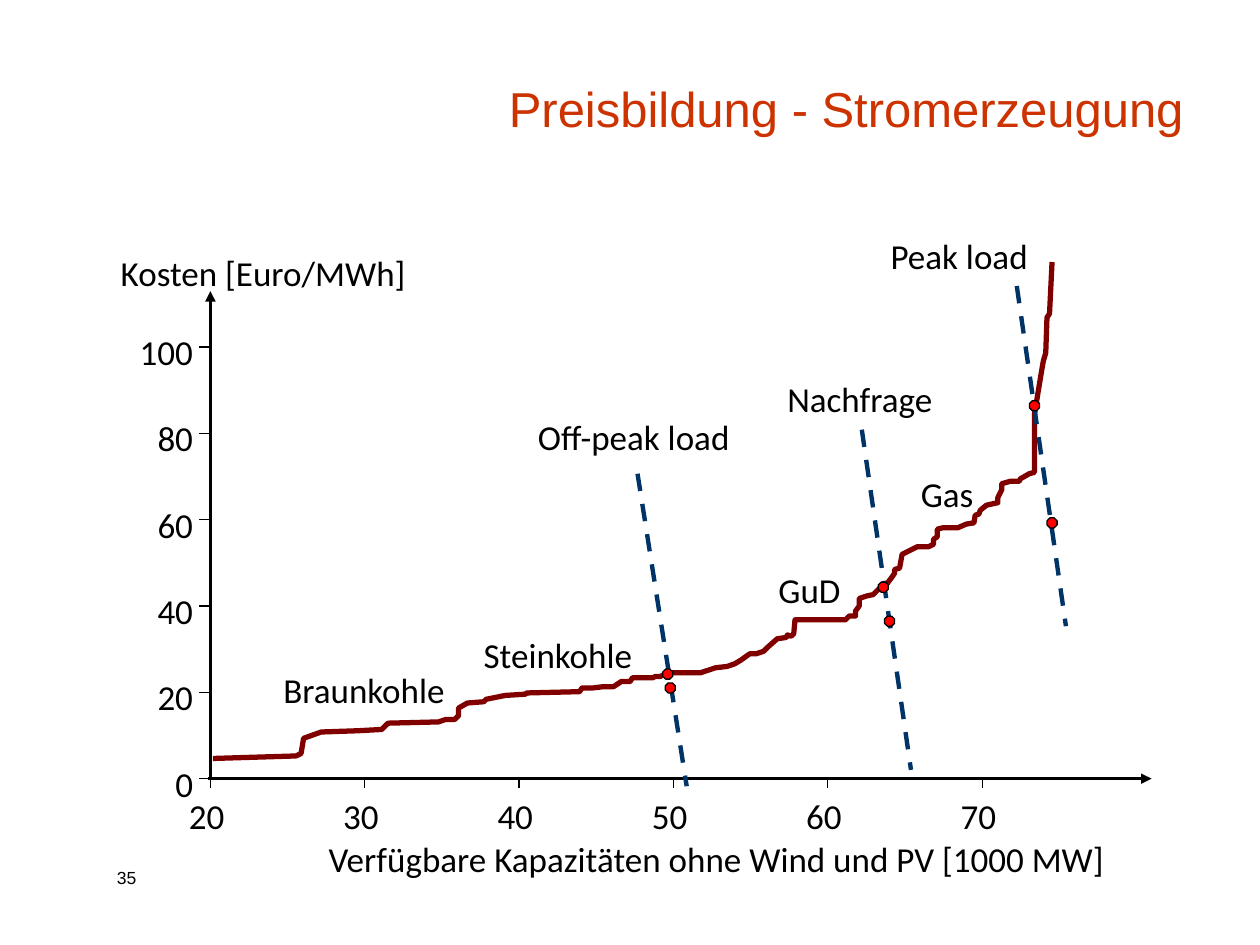
from dataclasses import dataclass

import pptx
import pptx.dml.color
import pptx.enum.dml
import pptx.enum.shapes
import pptx.enum.text
import pptx.oxml
import pptx.oxml.ns
import pptx.util

Inches = pptx.util.Inches
Align = pptx.enum.text.PP_ALIGN
Anchor = pptx.enum.text.MSO_ANCHOR

COLORS = {
    "text": "000000",
    "title": "CC3300",
    "axis": "000000",
    "supply": "800000",
    "demand": "003366",
    "point": "FF0000",
}

ORIGIN_X, ORIGIN_Y = 1.67, 6.18
STEP_X, STEP_Y = 1.225, 0.685
POINT_SIZE = 0.08


@dataclass
class Label:
    text: str
    left: float
    top: float
    width: float
    height: float = 0.44
    size: float = 20
    font: str = "Calibri"
    color: str = "text"
    align: Align = Align.LEFT
    anchor: Anchor = Anchor.TOP


@dataclass
class Line:
    x1: float
    y1: float
    x2: float
    y2: float
    width: float = 0.75
    color: str = "axis"
    dashed: bool = False
    arrow: bool = False


AXES = [
    Line(1.65, ORIGIN_Y, 9.14, ORIGIN_Y, 2, arrow=True),
    Line(ORIGIN_X, 6.19, ORIGIN_X, 2.31, 2, arrow=True),
]
DEMAND_LINES = [
    Line(6.84, 3.41, 7.23, 6.11, 2.5, "demand", dashed=True),
    Line(5.06, 3.76, 5.45, 6.24, 2.5, "demand", dashed=True),
    Line(8.07, 2.27, 8.46, 4.97, 2.5, "demand", dashed=True),
]
LABELS = [
    Label("35", 0.83, 6.83, 0.67, 0.27, 10, "Arial"),
    Label("Preisbildung - Stromerzeugung", 2.09, 0.42, 7.4, 0.72, 28, "Arial",
          "title", Align.RIGHT, Anchor.BOTTOM),
    Label("Kosten [Euro/MWh]", 0.86, 1.95, 3.26),
    Label("Verfügbare Kapazitäten ohne Wind und PV [1000 MW]", 2.51, 6.6, 6.48),
    Label("Nachfrage", 6.15, 2.95, 1.44),
    Label("Off-peak load", 4.17, 3.25, 1.88),
    Label("Peak load", 6.97, 1.81, 1.63),
    Label("Steinkohle", 3.74, 4.98, 1.56),
    Label("Braunkohle", 2.15, 5.26, 1.52),
    Label("Gas", 7.21, 3.7, 1.02),
    Label("GuD", 6.08, 4.46, 0.91),
]
MARKET_POINTS = [(5.26, 5.31), (8.17, 3.18), (6.97, 4.62),
                 (5.28, 5.42), (8.31, 4.11), (7.02, 4.89)]

# Supply curve vertices in hundredths of an inch
SUPPLY_CURVE = [
    (169, 602), (235, 600), (239, 598), (240, 592), (241, 586), (255, 581),
    (284, 580), (303, 579), (308, 574), (348, 573), (354, 571), (361, 571),
    (364, 568), (364, 562), (371, 558), (384, 557), (386, 555), (401, 552),
    (417, 551), (418, 550), (460, 549), (462, 546), (471, 546), (479, 545),
    (487, 545), (493, 541), (500, 541), (502, 538), (518, 538), (520, 537),
    (524, 537), (530, 534), (556, 534), (568, 530), (577, 529), (583, 527),
    (588, 524), (595, 519), (600, 519), (606, 517), (609, 514), (617, 507),
    (624, 506), (625, 504), (628, 505), (630, 503), (631, 492), (671, 492),
    (674, 489), (679, 489), (679, 485), (682, 481), (682, 475), (688, 473),
    (693, 472), (699, 466), (703, 465), (705, 462), (708, 458), (710, 455),
    (710, 452), (714, 451), (716, 440), (728, 434), (737, 434), (741, 432),
    (741, 428), (744, 426), (744, 420), (748, 419), (760, 419), (767, 416),
    (773, 415), (774, 409), (777, 408), (778, 405), (783, 401), (792, 399),
    (792, 395), (795, 389), (795, 384), (802, 382), (809, 382), (810, 380),
    (817, 376), (821, 375), (821, 329), (827, 293), (828, 287), (830, 280),
    (831, 252), (833, 249), (835, 208),
]


def rgb(name: str) -> pptx.dml.color.RGBColor:
    return pptx.dml.color.RGBColor.from_string(COLORS[name])


def add_label(slide, label: Label) -> None:
    box = slide.shapes.add_textbox(Inches(label.left), Inches(label.top),
                                   Inches(label.width), Inches(label.height))
    frame = box.text_frame
    frame.word_wrap = True
    frame.vertical_anchor = label.anchor
    frame.text = label.text
    paragraph = frame.paragraphs[0]
    paragraph.alignment = label.align
    font = paragraph.runs[0].font
    font.name = label.font
    font.size = pptx.util.Pt(label.size)
    font.color.rgb = rgb(label.color)


def add_line(slide, line: Line) -> None:
    connector = slide.shapes.add_connector(
        pptx.enum.shapes.MSO_CONNECTOR.STRAIGHT,
        Inches(line.x1), Inches(line.y1), Inches(line.x2), Inches(line.y2))
    connector.line.width = pptx.util.Pt(line.width)
    connector.line.color.rgb = rgb(line.color)
    if line.dashed:
        connector.line.dash_style = pptx.enum.dml.MSO_LINE.DASH
    properties = connector._element.spPr
    if line.arrow:
        tail = pptx.oxml.parse_xml(
            f'<a:tailEnd {pptx.oxml.ns.nsdecls("a")} type="triangle"/>')
        properties.find(pptx.oxml.ns.qn("a:ln")).append(tail)
    properties.append(pptx.oxml.parse_xml(
        f'<a:effectLst {pptx.oxml.ns.nsdecls("a")}/>'))


def add_ticks(slide) -> None:
    for index in range(6):
        y = ORIGIN_Y - index * STEP_Y
        add_line(slide, Line(ORIGIN_X, y, ORIGIN_X - 0.09, y))
        add_label(slide, Label(str(20 * index), 0.94, y - 0.18, 0.69,
                               align=Align.RIGHT))
        x = ORIGIN_X + index * STEP_X
        add_line(slide, Line(x, ORIGIN_Y, x, ORIGIN_Y + 0.07))
        add_label(slide, Label(str(20 + 10 * index), x - 0.27, 6.26, 0.49))


def add_supply_curve(slide) -> None:
    builder = slide.shapes.build_freeform(*SUPPLY_CURVE[0], scale=Inches(0.01))
    builder.add_line_segments(SUPPLY_CURVE[1:], close=False)
    curve = builder.convert_to_shape()
    curve.shadow.inherit = False
    curve.fill.background()
    curve.line.color.rgb = rgb("supply")
    curve.line.width = pptx.util.Pt(3)


def add_market_point(slide, left: float, top: float) -> None:
    point = slide.shapes.add_shape(
        pptx.enum.shapes.MSO_SHAPE.OCTAGON, Inches(left), Inches(top),
        Inches(POINT_SIZE), Inches(POINT_SIZE))
    point.shadow.inherit = False
    point.fill.solid()
    point.fill.fore_color.rgb = rgb("point")
    point.line.color.rgb = rgb("axis")
    point.line.width = pptx.util.Pt(0.75)


def main() -> None:
    presentation = pptx.Presentation()
    presentation.slide_width = Inches(10)
    presentation.slide_height = Inches(7.5)
    slide = presentation.slides.add_slide(presentation.slide_layouts[6])
    for axis in AXES:
        add_line(slide, axis)
    add_ticks(slide)
    add_supply_curve(slide)
    for demand_line in DEMAND_LINES:
        add_line(slide, demand_line)
    for left, top in MARKET_POINTS:
        add_market_point(slide, left, top)
    for label in LABELS:
        add_label(slide, label)
    presentation.save("out.pptx")


if __name__ == "__main__":
    main()
